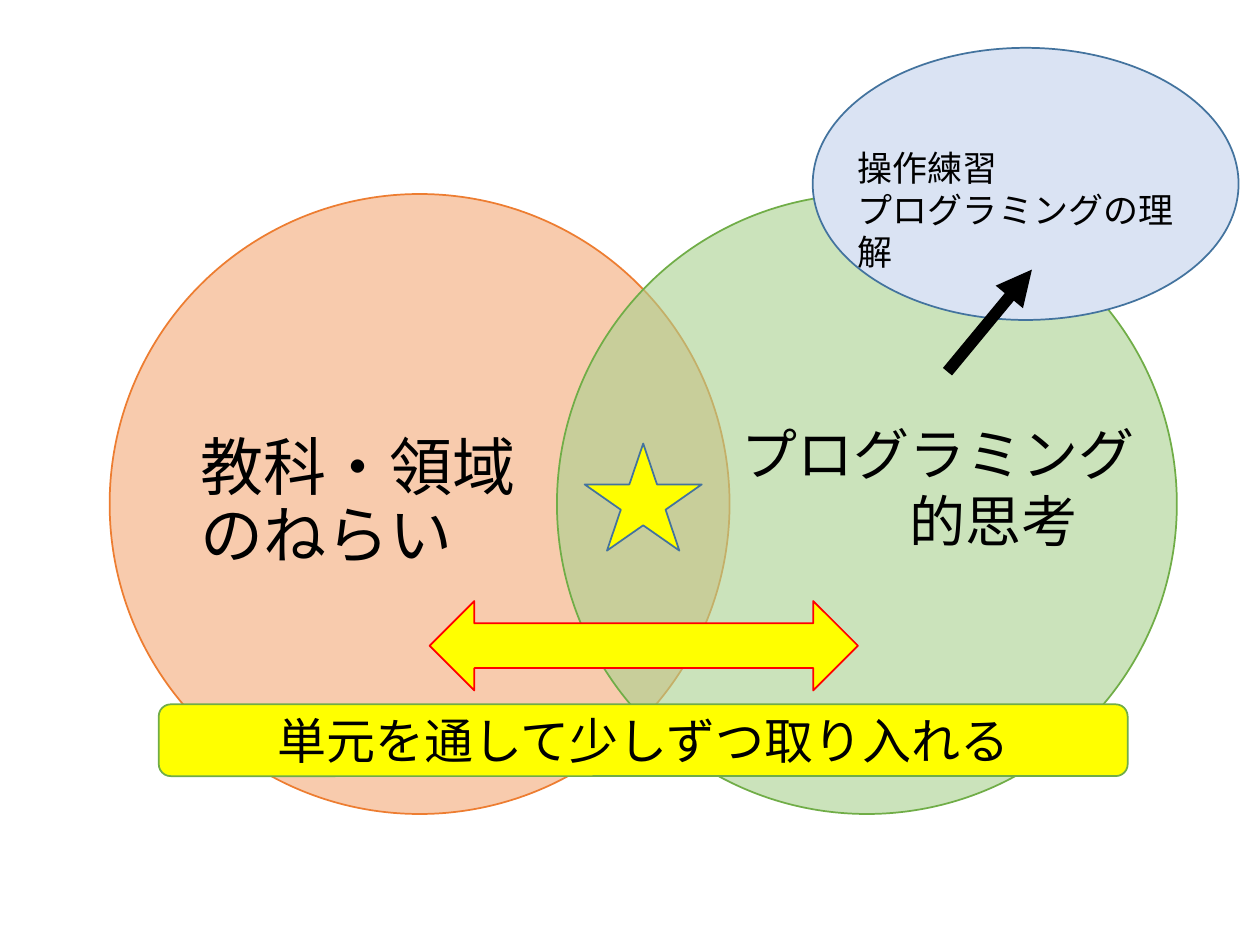
from pptx import Presentation
from pptx.dml.color import RGBColor
from pptx.enum.shapes import MSO_CONNECTOR as Connector, MSO_SHAPE as Shape
from pptx.enum.text import MSO_ANCHOR as Anchor, PP_ALIGN as Align
from pptx.oxml.ns import qn
from pptx.util import Inches, Pt
from lxml.etree import SubElement

COLUMNS, ROWS = 100, 75
FONT = "Noto Sans CJK JP"
BLACK, YELLOW, RED = "000000", "FFFF00", "FF0000"
ORANGE, PEACH = "ED7D31", "F8CBAD"
GREEN, LIGHT_GREEN = "70AD47", "A9D18E"
BLUE, PALE_BLUE = "43739E", "DAE3F3"


def color(value):
    """Turn a hex string into a colour."""
    return RGBColor.from_string(value)


def write(shape, text, size, align=Align.LEFT, anchor=Anchor.TOP,
          spacing=1.0, indents=(), margins=(0.1, 0.1)):
    """Write lines of text into a shape, with indents in characters."""
    frame = shape.text_frame
    frame.word_wrap = True
    frame.vertical_anchor = anchor
    frame.margin_left, frame.margin_right = map(Inches, margins)
    for index, line in enumerate(text.split("\n")):
        paragraph = frame.add_paragraph() if index else frame.paragraphs[0]
        paragraph.alignment = align
        paragraph.line_spacing = spacing
        if index < len(indents):
            properties = paragraph._p.get_or_add_pPr()
            properties.set("marL", str(Pt(size * indents[index])))
            properties.set("indent", "0")
        run = paragraph.add_run()
        run.text = line
        run.font.size = Pt(size)
        run.font.name = FONT
        run.font.color.rgb = color(BLACK)
        SubElement(run._r.rPr, qn("a:ea"), typeface=FONT)


class SlideBuilder:
    """Places styled elements on a grid over one slide."""

    def __init__(self, presentation):
        """Add a blank slide and measure its grid."""
        self.slide = presentation.slides.add_slide(presentation.slide_layouts[6])
        self.column = presentation.slide_width / COLUMNS
        self.row = presentation.slide_height / ROWS

    def place(self, x, y):
        """Convert columns and rows to slide lengths."""
        return round(x * self.column), round(y * self.row)

    def shape(self, kind, x, y, width, height, fill, line, opacity=100):
        """Draw a filled and outlined preset shape."""
        shape = self.slide.shapes.add_shape(
            kind, *self.place(x, y), *self.place(width, height))
        shape.shadow.inherit = False
        shape.fill.solid()
        shape.fill.fore_color.rgb = color(fill)
        shape.line.color.rgb = color(line)
        shape.line.width = Pt(1)
        if opacity < 100:
            solid = shape._element.spPr.find(qn("a:solidFill"))
            SubElement(solid[0], qn("a:alpha"), val=str(opacity * 1000))
        return shape

    def text(self, x, y, width, height, text, size, **style):
        """Add a text box."""
        box = self.slide.shapes.add_textbox(
            *self.place(x, y), *self.place(width, height))
        write(box, text, size, **style)

    def arrow(self, start, end, line, width):
        """Draw a straight arrow between two grid points."""
        arrow = self.slide.shapes.add_connector(
            Connector.STRAIGHT, *self.place(*start), *self.place(*end))
        arrow.line.color.rgb = color(line)
        arrow.line.width = Pt(width)
        SubElement(arrow.line._get_or_add_ln(), qn("a:tailEnd"), type="triangle")
        SubElement(arrow._element.spPr, qn("a:effectLst"))


def main():
    """Build the slide of two overlapping circles."""
    presentation = Presentation()
    presentation.slide_width, presentation.slide_height = Inches(10), Inches(7.5)
    builder = SlideBuilder(presentation)
    diameter, top = 49.2, 15.4

    subject = builder.shape(Shape.OVAL, 8.7, top, diameter, diameter, PEACH, ORANGE)
    write(subject, "教科・領域のねらい", 36, anchor=Anchor.MIDDLE,
          spacing=0.9, margins=(0, 0.68))
    builder.shape(Shape.OVAL, 44.2, top, diameter, diameter,
                  LIGHT_GREEN, GREEN, opacity=60)
    builder.text(57.9, 32.8, 34.5, 11.8, "プログラミング\n的思考", 32, indents=(0, 3))

    builder.shape(Shape.LEFT_RIGHT_ARROW, 34.1, 47.7, 34, 7.1, YELLOW, RED)
    banner = builder.shape(Shape.ROUNDED_RECTANGLE, 12.6, 55.9, 76.9, 5.7,
                           YELLOW, GREEN)
    write(banner, "単元を通して少しずつ取り入れる", 28,
          align=Align.CENTER, anchor=Anchor.MIDDLE)

    builder.shape(Shape.OVAL, 64.5, 3.8, 33.8, 21.6, PALE_BLUE, BLUE)
    builder.arrow((75.2, 29.5), (81.9, 21.4), BLACK, 6.75)
    builder.text(67.1, 11.1, 31.2, 7.7, "操作練習\nプログラミングの理解", 20,
                 margins=(0.1, 0.35))
    builder.shape(Shape.STAR_5_POINT, 46.4, 35.2, 9.3, 8.5, YELLOW, BLUE)
    presentation.save("out.pptx")


if __name__ == "__main__":
    main()
